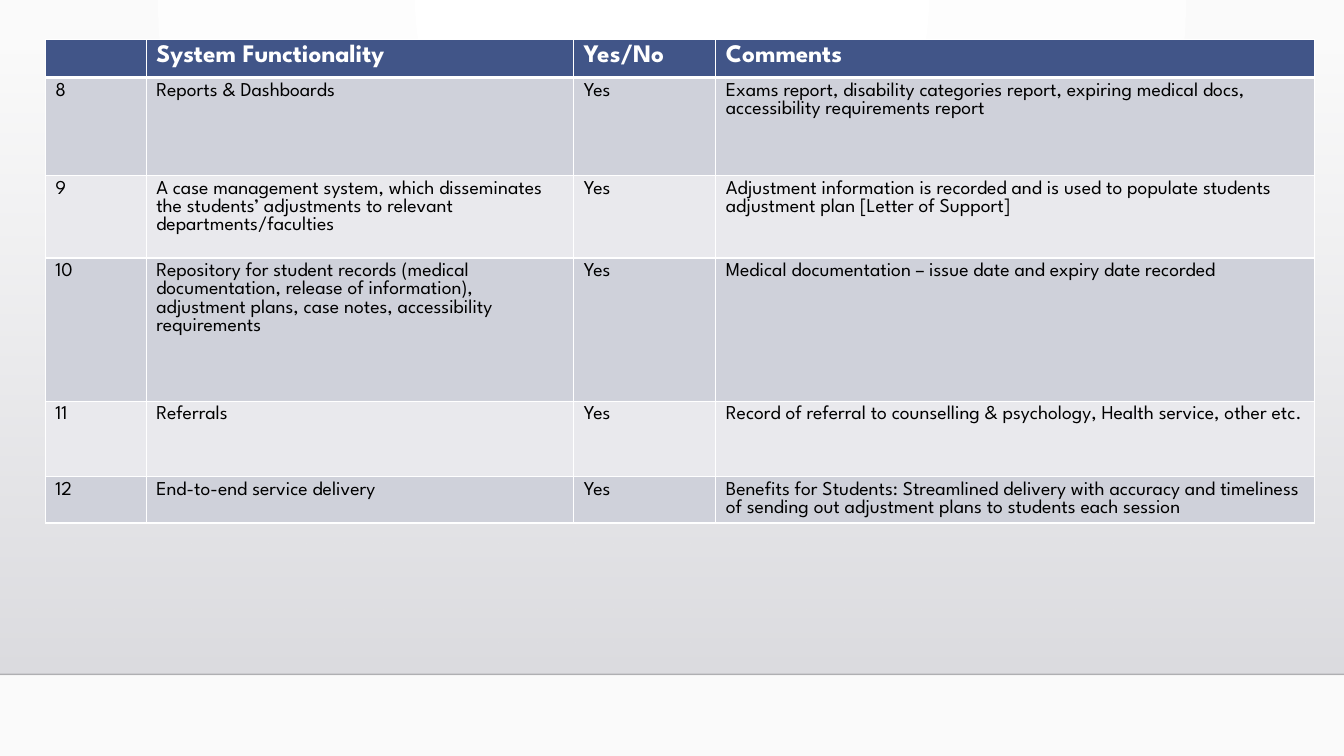
"""Build a slide with a table of system functionality, rows 8 to 12."""
from lxml import etree
from pptx import Presentation
from pptx.dml.color import RGBColor
from pptx.enum.shapes import MSO_CONNECTOR, MSO_SHAPE
from pptx.oxml.ns import qn
from pptx.util import Inches, Pt

RECTANGLE = MSO_SHAPE.RECTANGLE
STRAIGHT = MSO_CONNECTOR.STRAIGHT

THEME = {
    "font": "League Spartan",
    "header": {"size": Pt(18), "bold": True, "color": "FFFFFF"},
    "body": {"size": Pt(14), "bold": False, "color": "000000"},
    "header_fill": "415588",
    "bands": ["CFD1DA", "E9E9ED"],
    "border": "FFFFFF",
    "background": ["FFFFFF", "FAFAFA"],
    "panel": ["DCDCE0", "DEDEE2"],
    "rule": "000001",
}
WIDTH, HEIGHT = 13.33, 7.5
PANEL_TOP, PANEL_BOTTOM = 0.51, 6.69
COLUMN_WIDTHS = [1, 4.24, 1.41, 5.94]
ROW_HEIGHTS = [0.38, 0.97, 0.82, 1.42, 0.75, 0.46]
ROWS = [
    ["", "System Functionality", "Yes/No", "Comments"],
    ["8", "Reports & Dashboards", "Yes",
     "Exams report, disability categories report, expiring medical docs, "
     "accessibility requirements report"],
    ["9", "A case management system, which disseminates the students’ adjustments "
     "to relevant departments/faculties", "Yes",
     "Adjustment information is recorded and is used to populate students "
     "adjustment plan [Letter of Support]"],
    ["10", "Repository for student records (medical documentation, release of "
     "information), adjustment plans, case notes, accessibility requirements", "Yes",
     "Medical documentation – issue date and expiry date recorded"],
    ["11", "Referrals", "Yes",
     "Record of referral to counselling & psychology, Health service, other etc."],
    ["12", "End-to-end service delivery", "Yes",
     "Benefits for Students: Streamlined delivery with accuracy and timeliness of "
     "sending out adjustment plans to students each session"],
]


def set_gradient(fill, colors):
    """Give a fill a two-stop gradient that runs downwards."""
    fill.gradient()
    fill.gradient_angle = 270
    for stop, color in zip(fill.gradient_stops, colors):
        stop.color.rgb = RGBColor.from_string(color)


def add_borders(cell, bottom_width):
    """Draw the four sides of a cell ahead of its fill."""
    properties = cell._tc.get_or_add_tcPr()
    widths = {"lnL": 1, "lnR": 1, "lnT": 1, "lnB": bottom_width}
    for index, (side, width) in enumerate(widths.items()):
        line = etree.Element(qn(f"a:{side}"), w=str(Pt(width)))
        solid = etree.SubElement(line, qn("a:solidFill"))
        etree.SubElement(solid, qn("a:srgbClr"), val=THEME["border"])
        properties.insert(index, line)


deck = Presentation()
deck.slide_width, deck.slide_height = Inches(WIDTH), Inches(HEIGHT)
page = deck.slides.add_slide(deck.slide_layouts[6])

set_gradient(page.background.fill, THEME["background"])
backdrop = page.element.find(".//" + qn("a:gradFill"))
backdrop.remove(backdrop.find(qn("a:lin")))
glow = etree.SubElement(backdrop, qn("a:path"), path="circle")
etree.SubElement(glow, qn("a:fillToRect"), l="43000", t="0", r="43000", b="100000")

panel = page.shapes.add_shape(RECTANGLE, 0, Inches(PANEL_TOP), Inches(WIDTH),
                              Inches(PANEL_BOTTOM - PANEL_TOP))
panel.shadow.inherit = False
panel.line.fill.background()
set_gradient(panel.fill, THEME["panel"])
top_color = panel.element.find(".//" + qn("a:gs")).find(qn("a:srgbClr"))
etree.SubElement(top_color, qn("a:alpha"), val="0")

rule = page.shapes.add_connector(STRAIGHT, 0, Inches(PANEL_BOTTOM),
                                 Inches(WIDTH), Inches(PANEL_BOTTOM))
rule.line.width = Pt(1)
rule.line.color.rgb = RGBColor.from_string(THEME["rule"])
rule_color = rule.element.spPr.find(".//" + qn("a:srgbClr"))
etree.SubElement(rule_color, qn("a:alpha"), val="20000")
etree.SubElement(rule.element.spPr, qn("a:effectLst"))

table = page.shapes.add_table(
    len(ROWS), len(COLUMN_WIDTHS), Inches(0.45), Inches(0.39),
    Inches(sum(COLUMN_WIDTHS)), Inches(sum(ROW_HEIGHTS))).table
for column, width in zip(table.columns, COLUMN_WIDTHS):
    column.width = Inches(width)

for row_index, (row, height, texts) in enumerate(zip(table.rows, ROW_HEIGHTS, ROWS)):
    row.height = Inches(height)
    is_header = row_index == 0
    style = THEME["header" if is_header else "body"]
    fill = THEME["header_fill"] if is_header else THEME["bands"][(row_index - 1) % 2]
    for cell, text in zip(row.cells, texts):
        cell.fill.solid()
        cell.fill.fore_color.rgb = RGBColor.from_string(fill)
        add_borders(cell, 3 if is_header else 1)
        para = cell.text_frame.paragraphs[0]
        if not text:
            end = etree.SubElement(para._p, qn("a:endParaRPr"),
                                   sz=str(int(style["size"].pt * 100)))
            etree.SubElement(end, qn("a:latin"), typeface=THEME["font"])
            continue
        span = para.add_run()
        span.text = text
        span.font.color.rgb = RGBColor.from_string(style["color"])
        font_format = {"name": THEME["font"], "size": style["size"], "bold": style["bold"]}
        for name, value in font_format.items():
            setattr(span.font, name, value)

deck.save("out.pptx")
